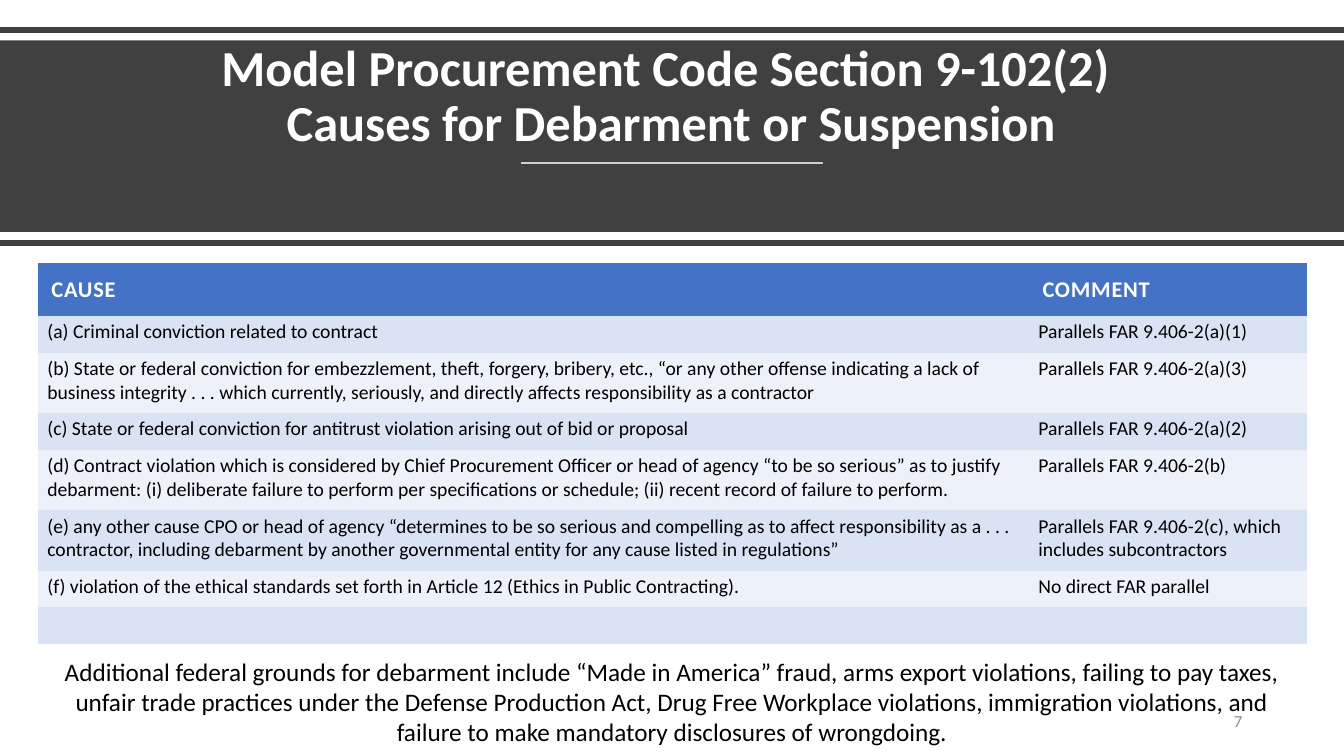
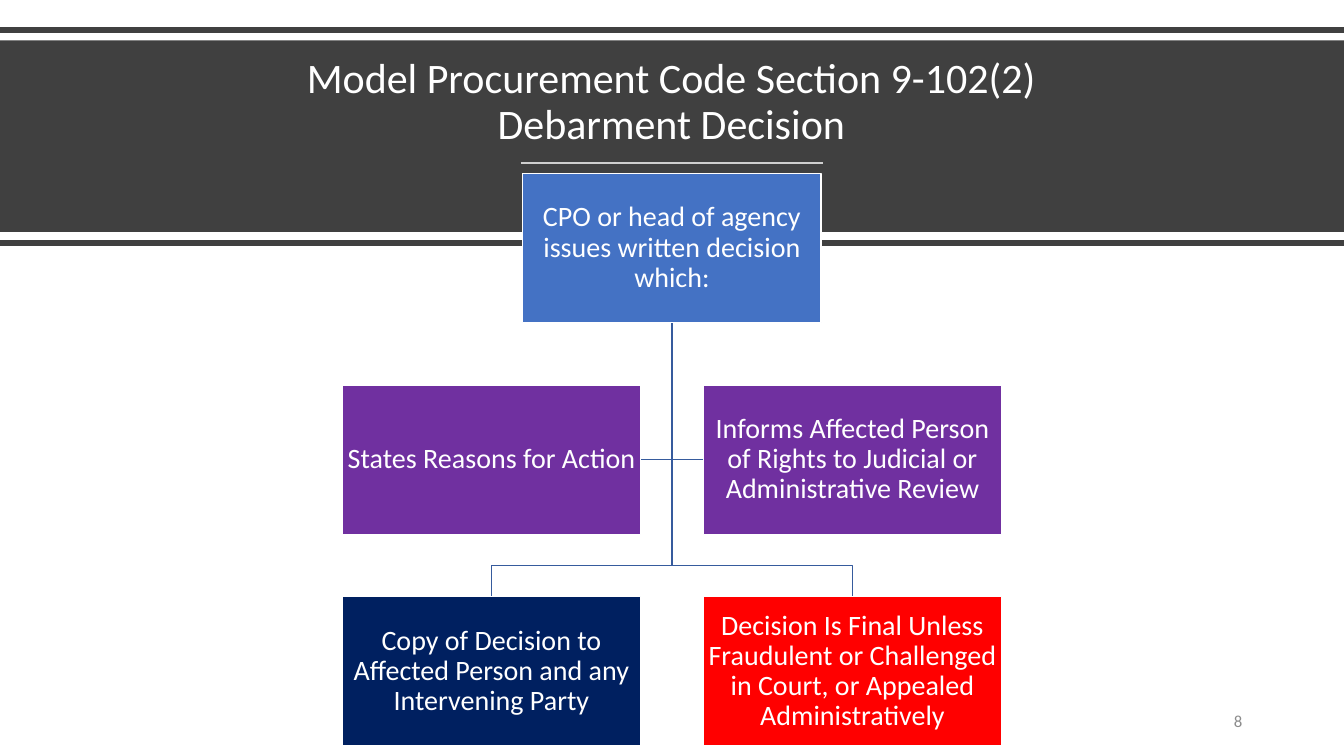
from pptx import Presentation
from pptx import util as u
from pptx.dml.color import RGBColor
from pptx.enum import shapes, text
from pptx.oxml.ns import qn
from lxml import etree

W, H = 13.33, 7.5
FONT = "Calibri"
C = dict(band="404040", rule="CFCFCF", white="FFFFFF", black="000000", blue="4472C4",
         row="DAE3F3", alt="EDF1F9", elbow="365B9D", purple="7030A0", navy="002060",
         red="FF0000", number="8C8C8C")

# Content
CAUSES = [
    ("CAUSE", "COMMENT"),
    ("(a) Criminal conviction related to contract", "Parallels FAR 9.406-2(a)(1)"),
    ("(b) State or federal conviction for embezzlement, theft, forgery, bribery, etc., “or any "
     "other offense indicating a lack of business integrity . . . which currently, seriously, "
     "and directly affects responsibility as a contractor", "Parallels FAR 9.406-2(a)(3)"),
    ("(c) State or federal conviction for antitrust violation arising out of bid or proposal",
     "Parallels FAR 9.406-2(a)(2)"),
    ("(d) Contract violation which is considered by Chief Procurement Officer or head of agency "
     "“to be so serious” as to justify debarment: (i) deliberate failure to perform per "
     "specifications or schedule; (ii) recent record of failure to perform.",
     "Parallels FAR 9.406-2(b)"),
    ("(e) any other cause CPO or head of agency “determines to be so serious and compelling as "
     "to affect responsibility as a . . . contractor, including debarment by another "
     "governmental entity for any cause listed in regulations”",
     "Parallels FAR 9.406-2(c), which includes subcontractors"),
    ("(f) violation of the ethical standards set forth in Article 12 (Ethics in Public "
     "Contracting).", "No direct FAR parallel"),
    ("", ""),
]
COL_WIDTHS = (9.83, 2.75)
ROW_HEIGHTS = (0.52, 0.36, 0.6, 0.36, 0.6, 0.6, 0.36, 0.36)
FEDERAL_NOTE = (
    "Additional federal grounds for debarment include “Made in America” fraud, arms export "
    "violations, failing to pay taxes, unfair trade practices under the Defense Production Act, "
    "Drug Free Workplace violations, immigration violations, and failure to make mandatory "
    "disclosures of wrongdoing.")

# Decision chart: (column, row, colour, text); column 0 is the centre line
DECISION = [
    (0, 0, "blue", "CPO or head of agency issues written decision which:"),
    (-1, 1, "purple", "States Reasons for Action"),
    (1, 1, "purple", "Informs Affected Person of Rights to Judicial or Administrative Review"),
    (-1, 2, "navy", "Copy of Decision to Affected Person and any Intervening Party"),
    (1, 2, "red", "Decision Is Final Unless Fraudulent or Challenged in Court, or Appealed "
                  "Administratively"),
]
BOX_W, BOX_H, TOP, ROW_STEP, COL_STEP = 2.96, 1.48, 1.72, 2.1, 1.79


def rgb(name):
    return RGBColor.from_string(C[name])


def write(tf, words, size, color, align="LEFT", anchor="TOP", bold=False, spacing=1.0,
          margins=None):
    """Fill a text frame or table cell with one paragraph."""
    frame = getattr(tf, "text_frame", tf)
    frame.word_wrap = True
    tf.vertical_anchor = getattr(text.MSO_ANCHOR, anchor)
    for side, inset in (margins or {}).items():
        setattr(tf, "margin_" + side, u.Inches(inset))
    p = frame.paragraphs[0]
    p.text = words
    p.alignment = getattr(text.PP_ALIGN, align)
    p.line_spacing = spacing
    for r in p.runs:
        for key, value in dict(size=u.Pt(size), name=FONT, bold=bold).items():
            setattr(r.font, key, value)
        r.font.color.rgb = rgb(color)
    return p


def add_text(s, at, words, size, color, **style):
    sp = s.shapes.add_textbox(*map(u.Inches, at))
    write(sp.text_frame, words, size, color, **style)


def add_box(s, at, fill, line=None):
    sp = s.shapes.add_shape(shapes.MSO_SHAPE.RECTANGLE, *map(u.Inches, at))
    sp.shadow.inherit = False
    sp.fill.solid()
    sp.fill.fore_color.rgb = rgb(fill)
    if line:
        sp.line.color.rgb = rgb(line)
        sp.line.width = u.Pt(1)
    else:
        sp.line.fill.background()
    return sp


def add_rule(s, x1, x2, y, color, width):
    ln = s.shapes.add_connector(shapes.MSO_CONNECTOR.STRAIGHT,
                                *map(u.Inches, (x1, y, x2, y)))
    ln.line.color.rgb = rgb(color)
    ln.line.width = u.Pt(width)
    etree.SubElement(ln._element.spPr, qn("a:effectLst"))


def add_slide(prs, title, size, bold, top):
    """Blank slide with the shared band, rules and title."""
    s = prs.slides.add_slide(prs.slide_layouts[6])
    add_box(s, (0, 0.4, W, 1.9), "band")
    for y in (0.3, 2.41):
        add_rule(s, 0, W, y, "band", 4)
    add_rule(s, W / 2 - 1.5, W / 2 + 1.5, 1.62, "rule", 1.5)
    add_text(s, (0.57, top, 12.18, 1.02), title, size, "white", align="CENTER",
             anchor="BOTTOM", bold=bold, spacing=0.9)
    return s


def add_number(s, number):
    add_text(s, (9.42, 6.95, 3, 0.4), str(number), 12, "number", align="RIGHT",
             anchor="MIDDLE")


def add_causes(s):
    at = (0.38, 2.61, sum(COL_WIDTHS), sum(ROW_HEIGHTS))
    table = s.shapes.add_table(len(CAUSES), len(COL_WIDTHS), *map(u.Inches, at)).table
    # "No Style, No Grid" keeps cell borders off
    style = table._tbl.tblPr.find(qn("a:tableStyleId"))
    style.text = "{2D5ABB26-0587-4C30-8999-92F81FD0307C}"
    for column, width in zip(table.columns, COL_WIDTHS):
        column.width = u.Inches(width)
    for i, (row, height) in enumerate(zip(CAUSES, ROW_HEIGHTS)):
        table.rows[i].height = u.Inches(height)
        head = i == 0
        for j, words in enumerate(row):
            cell = table.cell(i, j)
            cell.fill.solid()
            cell.fill.fore_color.rgb = rgb("blue" if head else "row" if i % 2 else "alt")
            if head:
                insets = dict.fromkeys(("left", "top", "right", "bottom"), 0.13)
            elif words:
                insets = dict(left=0.09, top=0.04, right=0.09, bottom=0.09)
            else:
                insets = dict(top=0, bottom=0)
            p = write(cell, words, 16 if head else 14, "white" if head else "black",
                      bold=head, margins=insets)
            if head:
                p.runs[0]._r.get_or_add_rPr().set("spc", "60")


def add_decision(s):
    mid, start = W / 2, TOP + BOX_H
    places = [(mid + col * COL_STEP, TOP + row * ROW_STEP) for col, row, _, _ in DECISION]
    # Elbows: sideways to the middle row, down into the last row
    for (col, row, _, _), (x, y) in list(zip(DECISION, places))[1:]:
        if row == 1:
            bend = y + BOX_H / 2
            points = [(mid, bend), (x - col * BOX_W / 2, bend)]
        else:
            bend = y - 0.31
            points = [(mid, bend), (x, bend), (x, y)]
        path = s.shapes.build_freeform(u.Inches(mid), u.Inches(start))
        path.add_line_segments([tuple(map(u.Inches, pt)) for pt in points], close=False)
        sp = path.convert_to_shape()
        sp.shadow.inherit = False
        sp.fill.background()
        sp.line.color.rgb = rgb("elbow")
        sp.line.width = u.Pt(1)
    for (_, _, fill, words), (x, y) in zip(DECISION, places):
        sp = add_box(s, (x - BOX_W / 2, y, BOX_W, BOX_H), fill, "white")
        write(sp.text_frame, words, 20, "white", align="CENTER", anchor="MIDDLE", spacing=0.9,
              margins=dict.fromkeys(("left", "top", "right", "bottom"), 0.01))


def main():
    prs = Presentation()
    prs.slide_width, prs.slide_height = u.Inches(W), u.Inches(H)

    s = add_slide(prs, "Model Procurement Code Section 9-102(2) \n"
                       "Causes for Debarment or Suspension", 36, True, 0.54)
    add_causes(s)
    add_text(s, (0.38, 6.46, 12.57, 1.01), FEDERAL_NOTE, 18, "black", align="CENTER")
    add_number(s, 7)

    s = add_slide(prs, "Model Procurement Code Section 9-102(2)\nDebarment Decision",
                  30, False, 0.5)
    add_decision(s)
    add_number(s, 8)

    prs.save("out.pptx")


if __name__ == "__main__":
    main()
